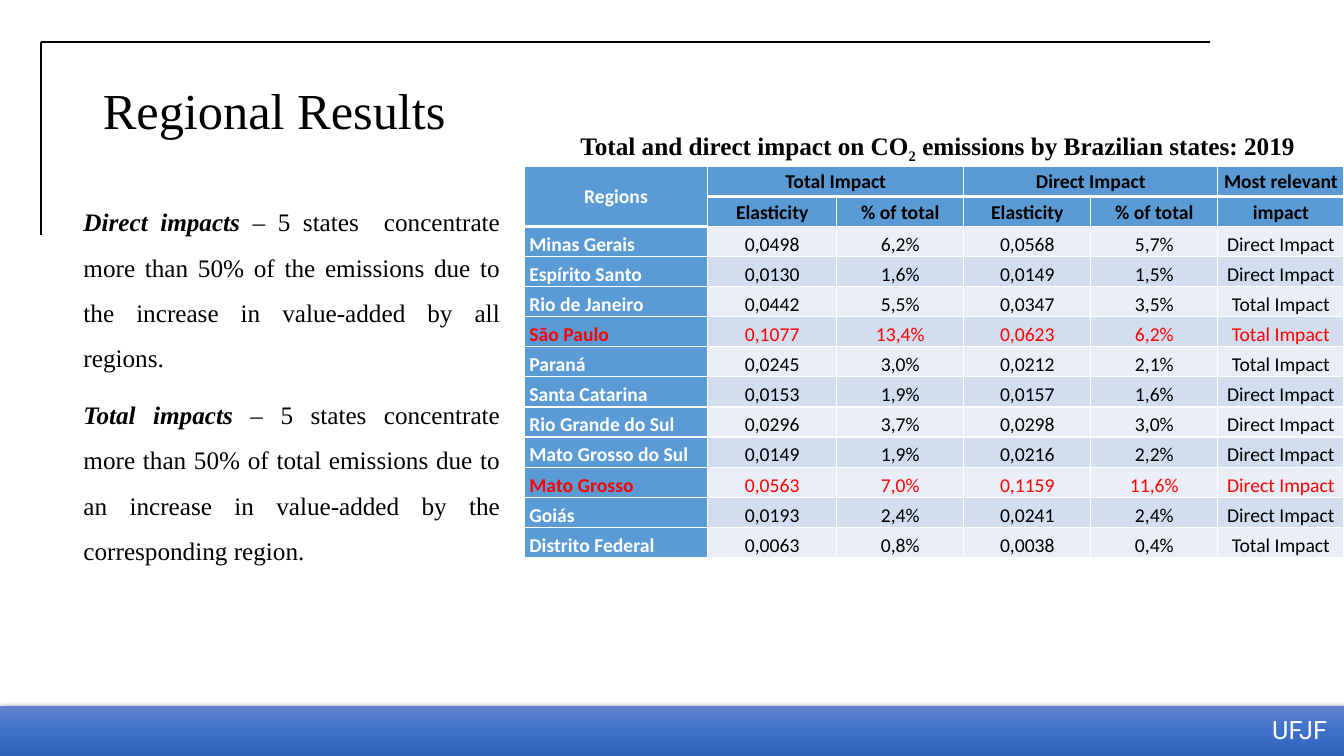
from pptx import Presentation
from pptx.dml.color import RGBColor
from pptx.enum.shapes import MSO_CONNECTOR, MSO_SHAPE
from pptx.enum.text import MSO_ANCHOR, MSO_AUTO_SIZE, PP_ALIGN
from pptx.oxml import parse_xml
from pptx.oxml.ns import nsdecls
from pptx.util import Inches, Pt

LEFT, MID, JUST = PP_ALIGN.LEFT, PP_ALIGN.CENTER, PP_ALIGN.JUSTIFY
CENTER, BOTTOM = MSO_ANCHOR.MIDDLE, MSO_ANCHOR.BOTTOM
BLACK, WHITE, RED, BLUE = "000000", "FFFFFF", "FF0000", "5B9BD5"
BANDS = ["EAEFF7", "D2DEEF"]
SERIF = "Times New Roman"

# Content
TITLE = "Regional Results"
CAPTION = [("Total and direct impact on CO", {}), ("2", {"base": True}),
           (" emissions by Brazilian states: 2019 ", {})]
NOTES = [
    ("Direct impacts", " – 5 states  concentrate more than 50% of the emissions "
     "due to the increase in value-added by all regions."),
    ("Total impacts", " – 5 states concentrate more than 50% of total emissions "
     "due to an increase in value-added by the corresponding region."),
]
HEADS = [
    ["Regions", "Total Impact", "", "Direct Impact", "", "Most relevant"],
    ["", "Elasticity", "% of total", "Elasticity", "% of total", "impact"],
]
MERGES = [((0, 0), (1, 0)), ((0, 1), (0, 2)), ((0, 3), (0, 4))]
STATES = [
    ("Minas Gerais", "0,0498", "6,2%", "0,0568", "5,7%", "Direct Impact"),
    ("Espírito Santo", "0,0130", "1,6%", "0,0149", "1,5%", "Direct Impact"),
    ("Rio de Janeiro", "0,0442", "5,5%", "0,0347", "3,5%", "Total Impact"),
    ("São Paulo", "0,1077", "13,4%", "0,0623", "6,2%", "Total Impact"),
    ("Paraná", "0,0245", "3,0%", "0,0212", "2,1%", "Total Impact"),
    ("Santa Catarina", "0,0153", "1,9%", "0,0157", "1,6%", "Direct Impact"),
    ("Rio Grande do Sul", "0,0296", "3,7%", "0,0298", "3,0%", "Direct Impact"),
    ("Mato Grosso do Sul", "0,0149", "1,9%", "0,0216", "2,2%", "Direct Impact"),
    ("Mato Grosso", "0,0563", "7,0%", "0,1159", "11,6%", "Direct Impact"),
    ("Goiás", "0,0193", "2,4%", "0,0241", "2,4%", "Direct Impact"),
    ("Distrito Federal", "0,0063", "0,8%", "0,0038", "0,4%", "Total Impact"),
]
MARKED = {"São Paulo", "Mato Grosso"}
WIDTHS = [1.82, 1.28, 1.26, 1.26, 1.26, 1.25]
FRAME = [(0.41, 0.42, 12, 0.42), (0.41, 0.42, 0.41, 2.33)]
STOPS = [(0, "6183CB"), (50, "3E70CA"), (100, "3062BB")]


def color(code):
    return RGBColor.from_string(code)


def put(obj, **vals):
    for key, val in vals.items():
        setattr(obj, key, val)


def add_run(para, text, size, name, ink, base=False, **vals):
    run = para.add_run()
    run.text = text
    put(run.font, size=Pt(size), name=name, **vals)
    run.font.color.rgb = color(ink)
    if base:
        run.font._element.set("baseline", "-25000")


def add_box(x, y, w, h, wrap=True):
    frame = slide.shapes.add_textbox(*map(Inches, (x, y, w, h))).text_frame
    put(frame, word_wrap=wrap, auto_size=MSO_AUTO_SIZE.SHAPE_TO_FIT_TEXT)
    return frame


def add_edges(cell, low):
    props = cell._tc.get_or_add_tcPr()
    for side, width in (("L", 1), ("R", 1), ("T", 1), ("B", low)):
        props.append(parse_xml(
            f'<a:ln{side} {nsdecls("a")} w="{Pt(width)}"><a:solidFill>'
            f'<a:srgbClr val="{WHITE}"/></a:solidFill></a:ln{side}>'))


def fill_cell(row, col, text):
    cell = grid.cell(row, col)
    head = row < len(HEADS)
    share = not head and col in (2, 4)
    side = 0.04 if head else 0.01 if share else 0.05
    add_edges(cell, 3 if row == 0 else 1)
    cell.fill.solid()
    cell.fill.fore_color.rgb = color(
        BLUE if head or col == 0 else BANDS[row % 2])
    put(cell, vertical_anchor=CENTER if head else BOTTOM,
        margin_left=Inches(side), margin_right=Inches(side),
        margin_top=Inches(0.01 if share else 0), margin_bottom=0)
    para = cell.text_frame.paragraphs[0]
    para.alignment = MID if head or col else LEFT
    if not share:
        put(para, line_spacing=1.07, space_after=Pt(8))
    if text:
        ink = WHITE if col == 0 else BLACK
        if not head and STATES[row - len(HEADS)][0] in MARKED:
            ink = RED
        add_run(para, text, 14, "Calibri", ink, bold=head or col == 0)


deck = Presentation()
put(deck, slide_width=Inches(13.33), slide_height=Inches(7.5))
slide = deck.slides.add_slide(deck.slide_layouts[5])

# Corner lines
for ends in FRAME:
    line = slide.shapes.add_connector(
        MSO_CONNECTOR.STRAIGHT, *map(Inches, ends))
    line.line.color.rgb = color(BLACK)
    line.line.width = Pt(1.5)
    line._element.spPr.append(parse_xml(f'<a:effectLst {nsdecls("a")}/>'))

# Footer bar with gradient and shadow
bar = slide.shapes.add_shape(
    MSO_SHAPE.RECTANGLE, *map(Inches, (0, 7, 13.33, 0.5)))
bar.line.fill.background()
edge = bar.line._get_or_add_ln()
stops = "".join(f'<a:gs pos="{pos * 1000}"><a:srgbClr val="{code}"/></a:gs>'
                for pos, code in STOPS)
edge.addprevious(parse_xml(
    f'<a:gradFill {nsdecls("a")}><a:gsLst>{stops}</a:gsLst>'
    '<a:lin ang="5400000" scaled="0"/></a:gradFill>'))
edge.addnext(parse_xml(
    f'<a:effectLst {nsdecls("a")}><a:outerShdw blurRad="{Pt(4.5)}" '
    f'dist="{Pt(1.5)}" dir="5400000" algn="ctr" rotWithShape="0">'
    f'<a:srgbClr val="{BLACK}"><a:alpha val="63000"/></a:srgbClr>'
    '</a:outerShdw></a:effectLst>'))
mark = add_box(12.52, 7.04, 0.76, 0.4, wrap=False)
add_run(mark.paragraphs[0], "UFJF", 18, "Roboto", WHITE)

# Title
title = slide.shapes.title
put(title, left=Inches(0.92), top=Inches(0.4),
    width=Inches(11.5), height=Inches(1.45))
put(title.text_frame, vertical_anchor=CENTER, word_wrap=True)
para = title.text_frame.paragraphs[0]
put(para, alignment=LEFT, line_spacing=0.9)
add_run(para, TITLE, 36, SERIF, BLACK)

# Table caption
para = add_box(5.22, 1.24, 8.22, 0.4).paragraphs[0]
para.alignment = MID
for text, vals in CAPTION:
    add_run(para, text, 18, SERIF, BLACK, bold=True, **vals)

# Table
rows = HEADS + STATES
grid = slide.shapes.add_table(
    len(rows), len(WIDTHS), *map(Inches, (5.2, 1.65, 8.13, 3.88))).table
put(grid, first_row=False, horz_banding=False)
for col, width in enumerate(WIDTHS):
    grid.columns[col].width = Inches(width)
for row, texts in enumerate(rows):
    for col, text in enumerate(texts):
        fill_cell(row, col, text)
for start, end in MERGES:
    grid.cell(*start).merge(grid.cell(*end))

# Notes on the left
frame = add_box(0.73, 1.85, 4.33, 3.8)
for i, (lead, rest) in enumerate(NOTES):
    para = frame.add_paragraph() if i else frame.paragraphs[0]
    put(para, alignment=JUST, line_spacing=1.5, space_after=Pt(8))
    add_run(para, lead, 18, SERIF, BLACK, bold=True, italic=True)
    add_run(para, rest, 18, SERIF, BLACK)

deck.save("out.pptx")
